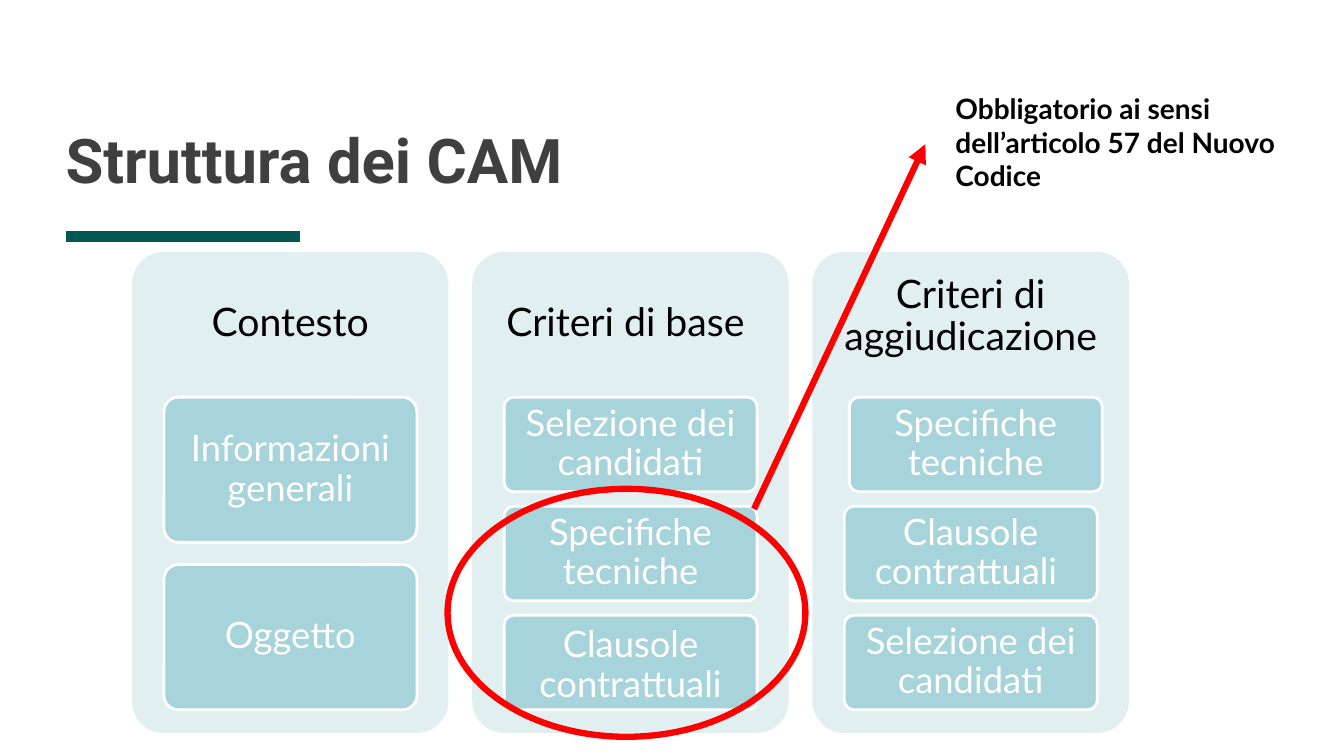
"""Build the slide on the structure of the CAM criteria."""

from dataclasses import dataclass

from lxml.etree import SubElement
from pptx import Presentation
from pptx.dml.color import RGBColor
from pptx.enum.shapes import MSO_CONNECTOR as Link, MSO_SHAPE as Preset
from pptx.enum.text import MSO_ANCHOR as Anchor, MSO_AUTO_SIZE as AutoSize, PP_ALIGN as Align
from pptx.oxml.ns import qn
from pptx.shapes.autoshape import Shape
from pptx.shapes.connector import Connector
from pptx.slide import Slide
from pptx.text.text import TextFrame
from pptx.util import Pt


@dataclass(frozen=True)
class Theme:
    title_font: str = "Roboto"
    body_font: str = "Lato"
    title_color: str = "3F3F3F"
    accent: str = "035854"
    panel: str = "E1EFF1"
    card: str = "A7D3DA"
    light: str = "FFFFFF"
    dark: str = "000000"
    highlight: str = "FF0000"
    title_size: float = 44
    heading_size: float = 28
    card_size: float = 26
    note_size: float = 20


@dataclass(frozen=True)
class Box:
    left: float
    top: float
    width: float
    height: float

    def lengths(self) -> tuple[Pt, Pt, Pt, Pt]:
        return Pt(self.left), Pt(self.top), Pt(self.width), Pt(self.height)


@dataclass(frozen=True)
class Card:
    label: str
    shift: float = 0
    text_drop: float = 0


@dataclass(frozen=True)
class Column:
    heading: str
    cards: tuple[Card, ...]
    heading_lift: float = 0


THEME = Theme()
COLUMNS = (
    Column("Contesto", (Card("Informazioni generali"), Card("Oggetto"))),
    Column("Criteri di base ", (
        Card("Selezione dei candidati"),
        Card("Specifiche tecniche"),
        Card("Clausole contrattuali", text_drop=2.2),
    )),
    Column("Criteri di aggiudicazione", (
        Card("Specifiche tecniche", shift=3.6),
        Card("Clausole contrattuali "),
        Card("Selezione dei candidati"),
    ), heading_lift=5),
)
PANEL = Box(94.3, 180, 226, 343.5)
COLUMN_PITCH = 243
HEADING_HEIGHT = 103
CARD_AREA = Box(22.8, 283.7, 180.7, 223.3)
GAP_RATIO = 0.153


def write_text(frame: TextFrame, text: str, *, size: float, color: str,
               font: str = THEME.body_font, bold: bool = False,
               align: Align = Align.LEFT, anchor: Anchor = Anchor.TOP,
               spacing: float = 1.0, fit: AutoSize = AutoSize.NONE,
               insets: tuple[float, float, float, float] = (0, 0, 0, 0)) -> None:
    frame.word_wrap = True
    frame.auto_size = fit
    frame.vertical_anchor = anchor
    (frame.margin_left, frame.margin_top,
     frame.margin_right, frame.margin_bottom) = map(Pt, insets)
    paragraph = frame.paragraphs[0]
    paragraph.alignment = align
    paragraph.line_spacing = spacing
    run = paragraph.add_run()
    run.text = text
    run.font.name = font
    run.font.size = Pt(size)
    run.font.bold = bold
    run.font.color.rgb = RGBColor.from_string(color)


def add_outline(shape: Shape | Connector, color: str, width: float) -> None:
    shape.line.color.rgb = RGBColor.from_string(color)
    shape.line.width = Pt(width)


def add_rounded(slide: Slide, box: Box, fill: str) -> Shape:
    rounded = slide.shapes.add_shape(Preset.ROUNDED_RECTANGLE, *box.lengths())
    rounded.adjustments[0] = 0.1
    rounded.shadow.inherit = False
    rounded.fill.solid()
    rounded.fill.fore_color.rgb = RGBColor.from_string(fill)
    rounded.line.fill.background()
    return rounded


def add_line(slide: Slide, start: tuple[float, float], end: tuple[float, float],
             color: str, width: float, arrow: bool = False) -> None:
    line = slide.shapes.add_connector(Link.STRAIGHT, *map(Pt, start + end))
    add_outline(line, color, width)
    properties = line.element.spPr
    if arrow:
        SubElement(properties.find(qn("a:ln")), qn("a:tailEnd"), type="triangle")
    SubElement(properties, qn("a:effectLst"))


def add_column(slide: Slide, column: Column, left: float) -> None:
    add_rounded(slide, Box(left, PANEL.top, PANEL.width, PANEL.height), THEME.panel)
    heading_box = Box(left, PANEL.top - column.heading_lift, PANEL.width, HEADING_HEIGHT)
    heading = slide.shapes.add_textbox(*heading_box.lengths())
    write_text(heading.text_frame, column.heading, size=THEME.heading_size,
               color=THEME.dark, align=Align.CENTER, anchor=Anchor.MIDDLE,
               spacing=0.9, insets=(11.5, 11.5, 11.5, 11.5))
    count = len(column.cards)
    height = CARD_AREA.height / (count + (count - 1) * GAP_RATIO)
    for row, card in enumerate(column.cards):
        card_box = Box(left + CARD_AREA.left + card.shift,
                       CARD_AREA.top + row * height * (1 + GAP_RATIO),
                       CARD_AREA.width, height)
        tile = add_rounded(slide, card_box, THEME.card)
        add_outline(tile, THEME.light, 2)
        write_text(tile.text_frame, card.label, size=THEME.card_size,
                   color=THEME.light, align=Align.CENTER, anchor=Anchor.MIDDLE,
                   spacing=0.9,
                   insets=(5, 3.6 + card.text_drop, 5, 3.6 - card.text_drop))


def add_highlight(slide: Slide) -> None:
    ring = slide.shapes.add_shape(Preset.OVAL, *Box(319.7, 349.2, 255.6, 177.1).lengths())
    ring.shadow.inherit = False
    ring.fill.background()
    add_outline(ring, THEME.highlight, 4.5)
    add_line(slide, (538.6, 363.6), (661, 103), THEME.highlight, 4.5, arrow=True)
    note = slide.shapes.add_textbox(*Box(675.4, 61.9, 256.3, 79.9).lengths())
    write_text(note.text_frame, "Obbligatorio ai sensi dell’articolo 57 del Nuovo Codice",
               size=THEME.note_size, color=THEME.dark, bold=True,
               fit=AutoSize.SHAPE_TO_FIT_TEXT, insets=(7.2, 3.6, 7.2, 3.6))


def main() -> None:
    deck = Presentation()
    deck.slide_width, deck.slide_height = Pt(960), Pt(540)
    slide = deck.slides.add_slide(deck.slide_layouts[5])
    title = slide.shapes.title
    title.left, title.top, title.width, title.height = Box(46.8, 15.8, 864, 123.8).lengths()
    write_text(title.text_frame, "Struttura dei CAM", size=THEME.title_size,
               color=THEME.title_color, font=THEME.title_font, bold=True,
               anchor=Anchor.BOTTOM, spacing=0.8)
    add_line(slide, (46.8, 169.2), (214.6, 169.2), THEME.accent, 8)
    for index, column in enumerate(COLUMNS):
        add_column(slide, column, PANEL.left + index * COLUMN_PITCH)
    add_highlight(slide)
    deck.save("out.pptx")


if __name__ == "__main__":
    main()
